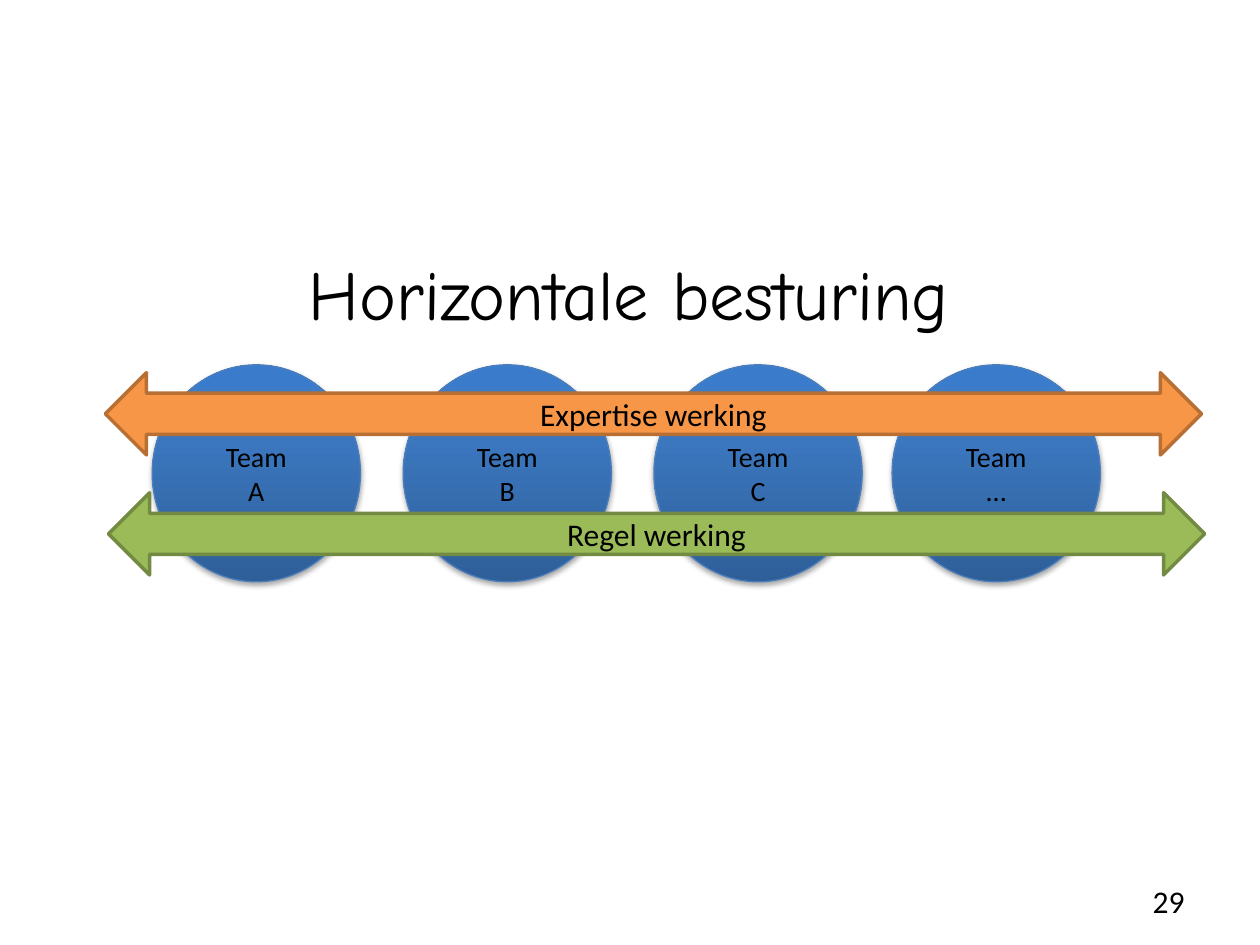
from copy import deepcopy

from pptx import Presentation
from pptx.dml.color import RGBColor
from pptx.enum import shapes, text
from pptx.oxml import parse_xml
from pptx.oxml.ns import nsdecls, qn
from pptx.util import Pt

COLORS = {
    "text": "000000",
    "circle_line": "4B7EBC",
    "expertise": "F79646",
    "expertise_line": "B76F34",
    "rules": "9BBB59",
    "rules_line": "738A42",
}
CIRCLE_STOPS = [(0, "2F5F99"), (0.8, "3D7CC7"), (1, "3A7CCB")]
SHADOW = (
    f'<a:outerShdw {nsdecls("a")} blurRad="{Pt(3.1)}" dist="{Pt(1.8)}" dir="5400000" '
    'rotWithShape="0"><a:srgbClr val="000000"><a:alpha val="35000"/></a:srgbClr></a:outerShdw>'
)


def write(box, lines, size, font="Calibri", align=text.PP_ALIGN.CENTER,
          anchor=text.MSO_ANCHOR.MIDDLE):
    frame = box.text_frame
    frame.word_wrap = True
    frame.vertical_anchor = anchor
    for index, line in enumerate(lines):
        para = frame.add_paragraph() if index else frame.paragraphs[0]
        para.alignment = align
        span = para.add_run()
        span.text = line
        span.font.size = Pt(size)
        span.font.name = font
        span.font.color.rgb = RGBColor.from_string(COLORS["text"])


def add_outlined(kind, left, top, width, height, line, weight):
    box = page.shapes.add_shape(kind, Pt(left), Pt(top), Pt(width), Pt(height))
    box.shadow.inherit = False
    box.line.color.rgb = RGBColor.from_string(COLORS[line])
    box.line.width = Pt(weight)
    return box


deck = Presentation()
deck.slide_width, deck.slide_height = Pt(720), Pt(540)
page = deck.slides.add_slide(deck.slide_layouts[5])

title = page.shapes.title
title.left, title.top, title.width, title.height = Pt(75), Pt(139.7), Pt(568.8), Pt(55.4)
write(title, ["Horizontale besturing"], 40, "Comic Neue", anchor=text.MSO_ANCHOR.TOP)
title.text_frame.auto_size = text.MSO_AUTO_SIZE.NONE

number = page.shapes.add_textbox(Pt(516), Pt(500.5), Pt(168), Pt(28.75))
write(number, ["29"], 18, align=text.PP_ALIGN.RIGHT)

for name, left in [("A", 87), ("B", 230.4), ("C", 373.7), ("...", 509.8)]:
    circle = add_outlined(shapes.MSO_SHAPE.OVAL, left, 208.5, 119, 124, "circle_line", 0.75)
    circle.fill.gradient()
    circle.fill.gradient_angle = 90
    properties = circle._element.spPr
    stop_list = properties.find(".//" + qn("a:gsLst"))
    stop_list.append(deepcopy(stop_list[-1]))
    for stop, (position, color) in zip(circle.fill.gradient_stops, CIRCLE_STOPS):
        stop.position = position
        stop.color.rgb = RGBColor.from_string(color)
    properties.find(qn("a:effectLst")).append(parse_xml(SHADOW))
    write(circle, ["Team", name], 16)

for label, color, left, top in [
    ("Expertise werking", "expertise", 60.2, 213),
    ("Regel werking", "rules", 62, 281.6),
]:
    arrow = add_outlined(shapes.MSO_SHAPE.LEFT_RIGHT_ARROW, left, top, 626.4, 47,
                         color + "_line", 2)
    arrow.fill.solid()
    arrow.fill.fore_color.rgb = RGBColor.from_string(COLORS[color])
    write(arrow, [label], 18)

deck.save("out.pptx")
